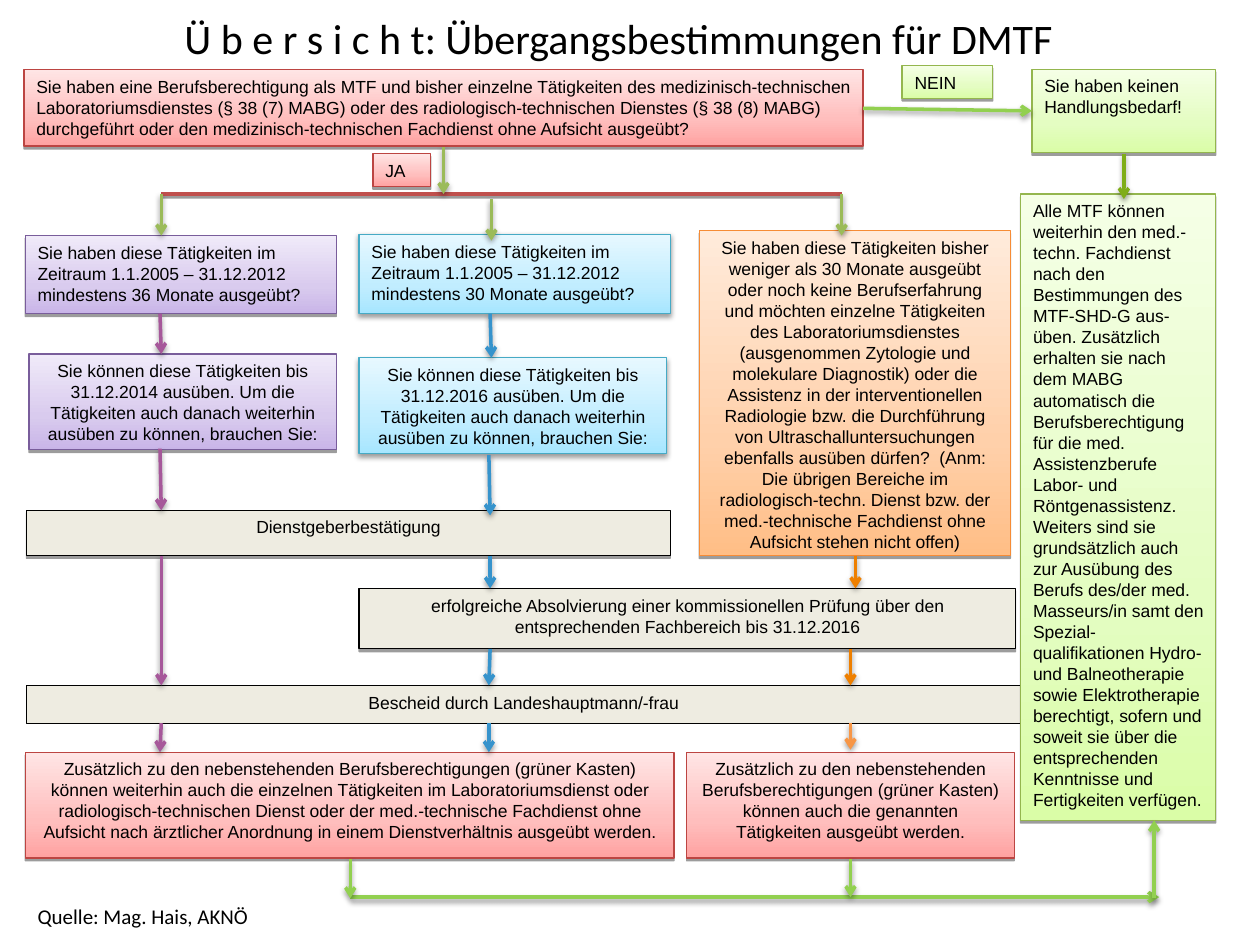
from lxml import etree
from copy import deepcopy
from pptx import Presentation
from pptx.dml.color import RGBColor
from pptx.enum.shapes import MSO_CONNECTOR as Connector, MSO_SHAPE as Shape
from pptx.enum.text import MSO_ANCHOR as Anchor, PP_ALIGN as Align
from pptx.oxml.ns import qn
from pptx.util import Inches, Pt

COLORS = {
    "text": "000000", "beige": "EEECE1", "bar": "C0504D", "lime": "92D050",
    "olive": "9BBB59", "moss": "7FAD18", "plum": "A6589A", "azure": "3693CC",
    "amber": "EE7F00", "peach": "F79646",
    "red_line": "BC4542", "green_line": "94B64E", "purple_line": "795D9B",
    "blue_line": "46AAC5", "orange_line": "F68C36",
}
# Colours from the bottom of a box to its top
GRADIENTS = {
    "red": ("FFA2A1", "FFBEBD", "FFE5E5"),
    "green": ("DAFDA7", "E4FDC2", "F5FFE6"),
    "purple": ("C9B5E8", "D9CBEE", "F0EAF9"),
    "blue": ("A7E6FF", "C1EDFF", "E7F8FF"),
    "orange": ("FFBE86", "FFD0AA", "FFEBDB"),
}
STOPS = (0, 35000, 100000)

PERIOD = ("Sie haben diese Tätigkeiten im Zeitraum 1.1.2005 – 31.12.2012 "
          "mindestens {} Monate ausgeübt?")
DEADLINE = ("Sie können diese Tätigkeiten bis 31.12.{} ausüben. Um die Tätigkeiten "
            "auch danach weiterhin ausüben zu können, brauchen Sie:")
ADDITION = "Zusätzlich zu den nebenstehenden Berufsberechtigungen (grüner Kasten) können "

# Style, left, top, width, height, alignment, paragraphs
BOXES = [
    ("red", 0.19, 0.55, 6.66, 0.61, Align.LEFT, [
        "Sie haben eine Berufsberechtigung als MTF und bisher einzelne Tätigkeiten des "
        "medizinisch-technischen Laboratoriumsdienstes (§ 38 (7) MABG) oder des "
        "radiologisch-technischen Dienstes (§ 38 (8) MABG) durchgeführt oder den "
        "medizinisch-technischen Fachdienst ohne Aufsicht ausgeübt?"]),
    ("green", 8.19, 0.55, 1.46, 0.66, Align.LEFT, ["Sie haben keinen Handlungsbedarf!"]),
    ("green", 7.16, 0.52, 0.72, 0.26, Align.LEFT, ["NEIN"]),
    ("red", 2.96, 1.22, 0.46, 0.26, Align.LEFT, ["JA"]),
    ("purple", 0.2, 1.87, 2.47, 0.62, Align.LEFT, [PERIOD.format(36)]),
    ("blue", 2.85, 1.86, 2.47, 0.63, Align.LEFT, [PERIOD.format(30)]),
    ("orange", 5.55, 1.83, 2.47, 2.58, Align.CENTER, [
        "Sie haben diese Tätigkeiten bisher weniger als 30 Monate ausgeübt oder noch keine "
        "Berufserfahrung und möchten einzelne Tätigkeiten des Laboratoriumsdienstes "
        "(ausgenommen Zytologie und molekulare Diagnostik) oder die Assistenz in der "
        "interventionellen Radiologie bzw. die Durchführung von Ultraschalluntersuchungen "
        "ebenfalls ausüben dürfen?  (Anm: Die übrigen Bereiche im radiologisch-techn. Dienst "
        "bzw. der med.-technische Fachdienst ohne Aufsicht stehen nicht offen)"]),
    ("purple", 0.23, 2.81, 2.44, 0.76, Align.CENTER, [DEADLINE.format(2014)]),
    ("blue", 2.85, 2.84, 2.44, 0.76, Align.CENTER, [DEADLINE.format(2016)]),
    ("beige", 0.21, 4.05, 5.11, 0.36, Align.CENTER, ["Dienstgeberbestätigung"]),
    ("beige", 2.85, 4.67, 5.21, 0.48, Align.CENTER, [
        "erfolgreiche Absolvierung einer kommissionellen Prüfung über den "
        "entsprechenden Fachbereich bis 31.12.2016"]),
    ("flat", 0.21, 5.44, 7.89, 0.3, Align.CENTER, ["Bescheid durch Landeshauptmann/-frau"]),
    ("green", 8.1, 1.54, 1.55, 4.97, Align.LEFT, [
        "Alle MTF können weiterhin den med.-techn. Fachdienst nach den Bestimmungen des "
        "MTF-SHD-G aus-üben. Zusätzlich erhalten sie nach dem MABG automatisch die "
        "Berufsberechtigung für die med. Assistenzberufe Labor- und Röntgenassistenz.",
        "Weiters sind sie grundsätzlich auch zur Ausübung des Berufs des/der med. "
        "Masseurs/in samt den Spezial-qualifikationen Hydro- und Balneotherapie sowie "
        "Elektrotherapie berechtigt, sofern und soweit sie über die entsprechenden "
        "Kenntnisse und Fertigkeiten verfügen."]),
    ("red", 0.2, 5.97, 5.15, 0.84, Align.CENTER, [
        ADDITION + "weiterhin auch die einzelnen Tätigkeiten im Laboratoriumsdienst oder "
        "radiologisch-technischen Dienst oder der med.-technische Fachdienst ohne Aufsicht "
        "nach ärztlicher Anordnung in einem Dienstverhältnis ausgeübt werden."]),
    ("red", 5.45, 5.97, 2.6, 0.84, Align.CENTER, [
        ADDITION + "auch die genannten Tätigkeiten ausgeübt werden."]),
]

# Start x, start y, end x, end y
ARROWS = {
    "lime": [(6.85, 0.86, 8.19, 0.88), (2.78, 7.12, 9.2, 7.12), (6.75, 6.82, 6.75, 7.12),
             (2.78, 6.82, 2.78, 7.13), (9.16, 7.13, 9.16, 6.51)],
    "olive": [(3.52, 1.17, 3.52, 1.54), (1.28, 1.54, 1.28, 1.87),
              (6.68, 1.54, 6.68, 1.87), (3.9, 1.58, 3.9, 1.91)],
    "plum": [(1.27, 2.49, 1.28, 2.81), (1.27, 3.56, 1.28, 4.05),
             (1.28, 4.41, 1.28, 5.44), (1.28, 5.74, 1.27, 5.97)],
    "azure": [(3.89, 2.49, 3.9, 2.84), (3.88, 3.61, 3.89, 4.09), (3.89, 4.41, 3.89, 4.67),
              (3.89, 5.15, 3.88, 5.44), (3.88, 5.74, 3.88, 5.97)],
    "amber": [(6.79, 4.41, 6.79, 4.67), (6.75, 5.15, 6.75, 5.44)],
    "peach": [(6.75, 5.74, 6.75, 5.95)],
    "moss": [(8.92, 1.22, 8.92, 1.58)],
}


def rgb(name):
    return RGBColor.from_string(COLORS[name])


def set_shadow(element, blur):
    """Replace the theme effect by a shadow below; a blur of None means no shadow."""
    properties = element.spPr
    for old in properties.findall(qn("a:effectLst")):
        properties.remove(old)
    effects = etree.SubElement(properties, qn("a:effectLst"))
    if blur is None:
        return
    shadow = etree.SubElement(effects, qn("a:outerShdw"), blurRad=str(Pt(blur)),
                              dist=str(Pt(1.6)), dir="5400000", rotWithShape="0")
    color = etree.SubElement(shadow, qn("a:srgbClr"), val="000000")
    etree.SubElement(color, qn("a:alpha"), val="38000")


def fill_gradient(box, colors):
    box.fill.gradient()
    box.fill.gradient_angle = 90
    stops = box._element.spPr.find(qn("a:gradFill")).find(qn("a:gsLst"))
    stops.insert(1, deepcopy(stops[0]))
    for stop, position, color in zip(stops, STOPS, colors):
        stop.set("pos", str(position))
        for old in list(stop):
            stop.remove(old)
        etree.SubElement(stop, qn("a:srgbClr"), val=color)


def write(frame, paragraphs, font, size, align):
    frame.word_wrap = True
    frame.vertical_anchor = Anchor.TOP
    for index, text in enumerate(paragraphs):
        paragraph = frame.add_paragraph() if index else frame.paragraphs[0]
        paragraph.alignment = align
        run = paragraph.add_run()
        run.text = text
        run.font.name = font
        run.font.size = Pt(size)
        run.font.color.rgb = rgb("text")


def add_box(slide, style, left, top, width, height, align, paragraphs):
    box = slide.shapes.add_shape(Shape.RECTANGLE, Inches(left), Inches(top),
                                 Inches(width), Inches(height))
    if style in GRADIENTS:
        fill_gradient(box, GRADIENTS[style])
        box.line.color.rgb = rgb(style + "_line")
    else:
        box.fill.solid()
        box.fill.fore_color.rgb = rgb("beige")
        box.line.color.rgb = rgb("text")
    box.line.width = Pt(0.5 if style == "flat" else 0.75)
    set_shadow(box._element, {"flat": None, "blue": 3.1}.get(style, 0))
    write(box.text_frame, paragraphs, "Arial", 10, align)


def add_line(slide, color, points, arrow=True):
    line = slide.shapes.add_connector(Connector.STRAIGHT, *map(Inches, points))
    line.line.color.rgb = rgb(color)
    line.line.width = Pt(2)
    if arrow:
        etree.SubElement(line.line._get_or_add_ln(), qn("a:tailEnd"), type="arrow")
    set_shadow(line._element, 3.1 if arrow else 0)


def add_label(slide, text, left, top, width, height, size, align):
    label = slide.shapes.add_textbox(Inches(left), Inches(top), Inches(width), Inches(height))
    write(label.text_frame, [text], "Calibri", size, align)


def main():
    deck = Presentation()
    deck.slide_width, deck.slide_height = Inches(10), Inches(7.5)
    slide = deck.slides.add_slide(deck.slide_layouts[6])
    for box in BOXES:
        add_box(slide, *box)
    add_line(slide, "bar", (1.28, 1.54, 6.68, 1.54), arrow=False)
    for color, routes in ARROWS.items():
        for points in routes:
            add_line(slide, color, points)
    add_label(slide, "Quelle: Mag. Hais, AKNÖ", 0.2, 7.12, 3.39, 0.3, 12, Align.LEFT)
    add_label(slide, "Ü b e r s i c h t: Übergangsbestimmungen für DMTF",
              0.17, 0.05, 9.48, 0.5, 24, Align.CENTER)
    deck.save("out.pptx")


if __name__ == "__main__":
    main()
